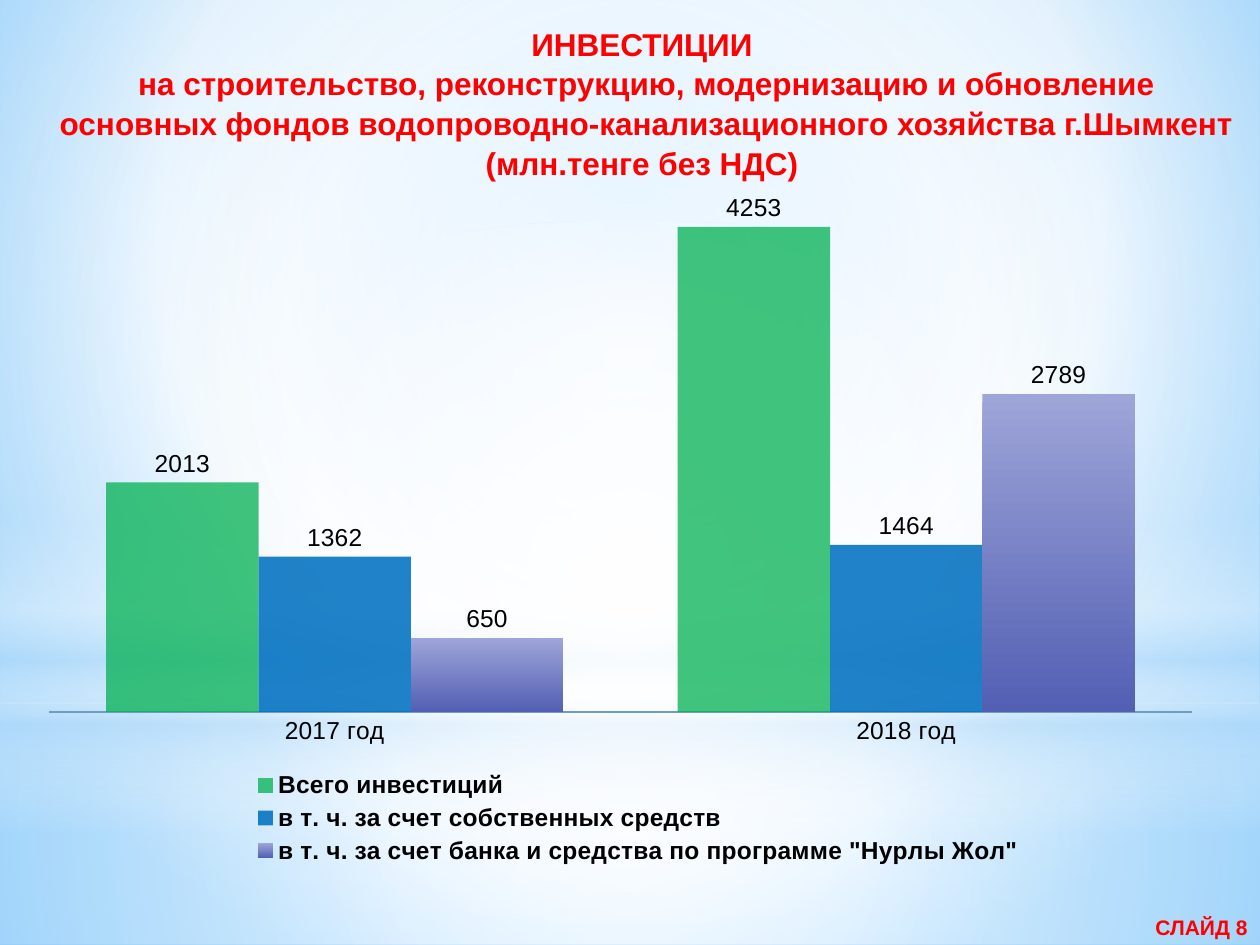
from dataclasses import dataclass
from typing import Optional

from lxml import etree
from pptx import Presentation, util as u
from pptx.chart.data import CategoryChartData
from pptx.dml.color import RGBColor
from pptx.enum import chart as ch, shapes, text
from pptx.oxml import ns


@dataclass(frozen=True)
class Theme:
    font: str = "Arial"
    red: str = "FF0000"
    black: str = "000000"
    white: str = "FFFFFF"
    sky: str = "B4DCFA"
    axis: str = "6F9DBD"
    title_pt: int = 18
    chart_pt: int = 14
    label_pt: int = 12


T = Theme()
CENTRE = (50, 50, 50, 50)


@dataclass(frozen=True)
class Stop:
    pos: int
    color: str
    alpha: int = 100


@dataclass(frozen=True)
class Paint:
    """One stop is a solid; a focus makes the gradient radial, else it runs down."""
    stops: tuple[Stop, ...]
    focus: Optional[tuple[int, int, int, int]] = None


@dataclass(frozen=True)
class Panel:
    kind: shapes.MSO_SHAPE
    box: tuple[float, float, float, float]
    paint: Paint


@dataclass(frozen=True)
class Series:
    name: str
    values: tuple[int, ...]
    paint: Paint


BACKDROP = Paint((Stop(0, "9ED5FF"), Stop(60, T.white), Stop(100, "5BB9FF")), (20, 10, 20, 60))
RECT, OVAL = shapes.MSO_SHAPE.RECTANGLE, shapes.MSO_SHAPE.OVAL
PANELS = [
    Panel(RECT, (0, 5.58, 10, 1.92), Paint(
        (Stop(0, T.white, 91), Stop(37, T.white, 76), Stop(100, T.sky, 79)), CENTRE)),
    Panel(RECT, (0, 0, 10, 5.58), Paint(
        (Stop(0, T.white, 89), Stop(48, T.white, 62), Stop(100, T.sky, 79)), CENTRE)),
    Panel(RECT, (0, 4.12, 10, 2.5), Paint(
        (Stop(0, T.white, 0), Stop(29, T.white, 30), Stop(45, T.sky, 40),
         Stop(55, T.white, 26), Stop(65, T.sky, 60), Stop(100, T.white, 0)))),
    Panel(OVAL, (0, 1.75, 10, 5.58), Paint(
        (Stop(0, T.white), Stop(56, T.white, 0)), CENTRE)),
]
YEARS = ("2017 год", "2018 год")
SERIES = [
    Series("Всего инвестиций", (2013, 4253), Paint((Stop(0, "00B050", 74),))),
    Series("в т. ч. за счет собственных средств", (1362, 1464), Paint((Stop(0, "0070C0", 87),))),
    Series('в т. ч. за счет банка и средства по программе "Нурлы Жол"', (650, 2789),
           Paint((Stop(0, "9EA5D8"), Stop(100, "535FB3")))),
]
TITLE = [
    "ИНВЕСТИЦИИ ",
    "на строительство, реконструкцию, модернизацию и обновление основных фондов "
    "водопроводно-канализационного хозяйства г.Шымкент (млн.тенге без НДС) ",
]


def inches(box) -> list:
    return [u.Inches(v) for v in box]


def assign(target, values: dict) -> None:
    for name, value in values.items():
        setattr(target, name, value)


def set_font(font, size: int, color: str, bold: bool) -> None:
    assign(font, {"name": T.font, "size": u.Pt(size), "bold": bold})
    font.color.rgb = RGBColor.from_string(color)


def apply_paint(fill, element, paint: Paint) -> None:
    """Put the paint in place of the element's first solid fill."""
    fill.solid()
    old = next(element.iter(ns.qn("a:solidFill")))
    colors = [f'<a:srgbClr val="{st.color}"><a:alpha val="{st.alpha * 1000}"/></a:srgbClr>'
              for st in paint.stops]
    if len(colors) == 1:
        tag, body = "solidFill", colors[0]
    else:
        tag = "gradFill"
        stops = "".join(f'<a:gs pos="{st.pos * 1000}">{c}</a:gs>'
                        for st, c in zip(paint.stops, colors))
        shade = '<a:lin ang="5400000" scaled="0"/>'
        if paint.focus:
            sides = " ".join(f'{k}="{v * 1000}"' for k, v in zip("ltrb", paint.focus))
            shade = f'<a:path path="circle"><a:fillToRect {sides}/></a:path>'
        body = f"<a:gsLst>{stops}</a:gsLst>{shade}"
    new = etree.fromstring(f'<a:{tag} {ns.nsdecls("a")}>{body}</a:{tag}>')
    old.getparent().replace(old, new)


def draw_panel(s, panel: Panel) -> None:
    sp = s.shapes.add_shape(panel.kind, *inches(panel.box))
    sp.shadow.inherit = False
    sp.line.fill.background()
    apply_paint(sp.fill, sp.element, panel.paint)


def write_text(sp, box, lines: list[str], size: int, align, spacing: float) -> None:
    assign(sp, dict(zip(("left", "top", "width", "height"), inches(box))))
    tf = sp.text_frame
    assign(tf, {"word_wrap": True, "vertical_anchor": text.MSO_ANCHOR.TOP,
                "auto_size": text.MSO_AUTO_SIZE.SHAPE_TO_FIT_TEXT})
    for i, line in enumerate(lines):
        p = tf.add_paragraph() if i else tf.paragraphs[0]
        assign(p, {"alignment": align, "line_spacing": spacing,
                   "space_before": u.Pt(0), "space_after": u.Pt(0)})
        r = p.add_run()
        r.text = line
        set_font(r.font, size, T.red, True)


def set_layout(parent, x: float, y: float, w: float, h: float, inner: bool) -> None:
    """Place a chart part by fractions of the chart area."""
    for old in parent.findall(ns.qn("c:layout")):
        parent.remove(old)
    target = '<c:layoutTarget val="inner"/>' if inner else ""
    sizes = "".join(f'<c:{k} val="{v}"/>' for k, v in zip("xywh", (x, y, w, h)))
    layout = etree.fromstring(
        f'<c:layout {ns.nsdecls("c")}><c:manualLayout>{target}<c:xMode val="edge"/>'
        f'<c:yMode val="edge"/>{sizes}</c:manualLayout></c:layout>')
    parent.insert(0 if inner else 1, layout)


def draw_chart(s, box) -> None:
    data = CategoryChartData()
    data.categories = YEARS
    for row in SERIES:
        data.add_series(row.name, row.values)
    chart = s.shapes.add_chart(ch.XL_CHART_TYPE.COLUMN_CLUSTERED, *inches(box), data).chart
    assign(chart, {"has_title": False, "has_legend": True})
    set_font(chart.font, T.chart_pt, T.black, False)

    # Axes
    assign(chart.value_axis, {"visible": False, "has_major_gridlines": False,
                              "minimum_scale": 0, "maximum_scale": 4500})
    axis = chart.category_axis
    axis.major_tick_mark = ch.XL_TICK_MARK.NONE
    axis.format.line.color.rgb = RGBColor.from_string(T.axis)

    # Columns and their values
    plot = chart.plots[0]
    assign(plot, {"gap_width": 75, "overlap": 0, "vary_by_categories": False,
                  "has_data_labels": True})
    assign(plot.data_labels, {"show_value": True,
                              "position": ch.XL_LABEL_POSITION.OUTSIDE_END})
    for ser, row in zip(plot.series, SERIES):
        apply_paint(ser.format.fill, ser._element, row.paint)

    # Legend and plot position
    legend = chart.legend
    assign(legend, {"position": ch.XL_LEGEND_POSITION.BOTTOM, "include_in_layout": False})
    set_font(legend.font, T.chart_pt, T.black, True)
    area = next(chart.element.iter(ns.qn("c:plotArea")))
    set_layout(area, 0.02, 0.02, 0.96, 0.75, True)
    set_layout(next(chart.element.iter(ns.qn("c:legend"))), 0.18, 0.85, 0.67, 0.15, False)


def main() -> None:
    prs = Presentation()
    assign(prs, {"slide_width": u.Inches(10), "slide_height": u.Inches(7.5)})
    s = prs.slides.add_slide(prs.slide_layouts[5])

    # Backdrop
    fill = s.background.fill
    apply_paint(fill, s.element, BACKDROP)
    for panel in PANELS:
        draw_panel(s, panel)

    draw_chart(s, (0.2, 1.47, 9.45, 5.43))

    # Title goes in front of the panels
    title = s.shapes.title
    title.element.getparent().append(title.element)
    write_text(title, (0.36, 0.13, 9.54, 1.31), TITLE, T.title_pt, text.PP_ALIGN.CENTER, 1.05)

    # Slide number label
    box = (8.94, 7.21, 1.06, 0.3)
    label = s.shapes.add_textbox(*inches(box))
    write_text(label, box, ["СЛАЙД 8"], T.label_pt, text.PP_ALIGN.RIGHT, 1.0)

    prs.save("out.pptx")


if __name__ == "__main__":
    main()
